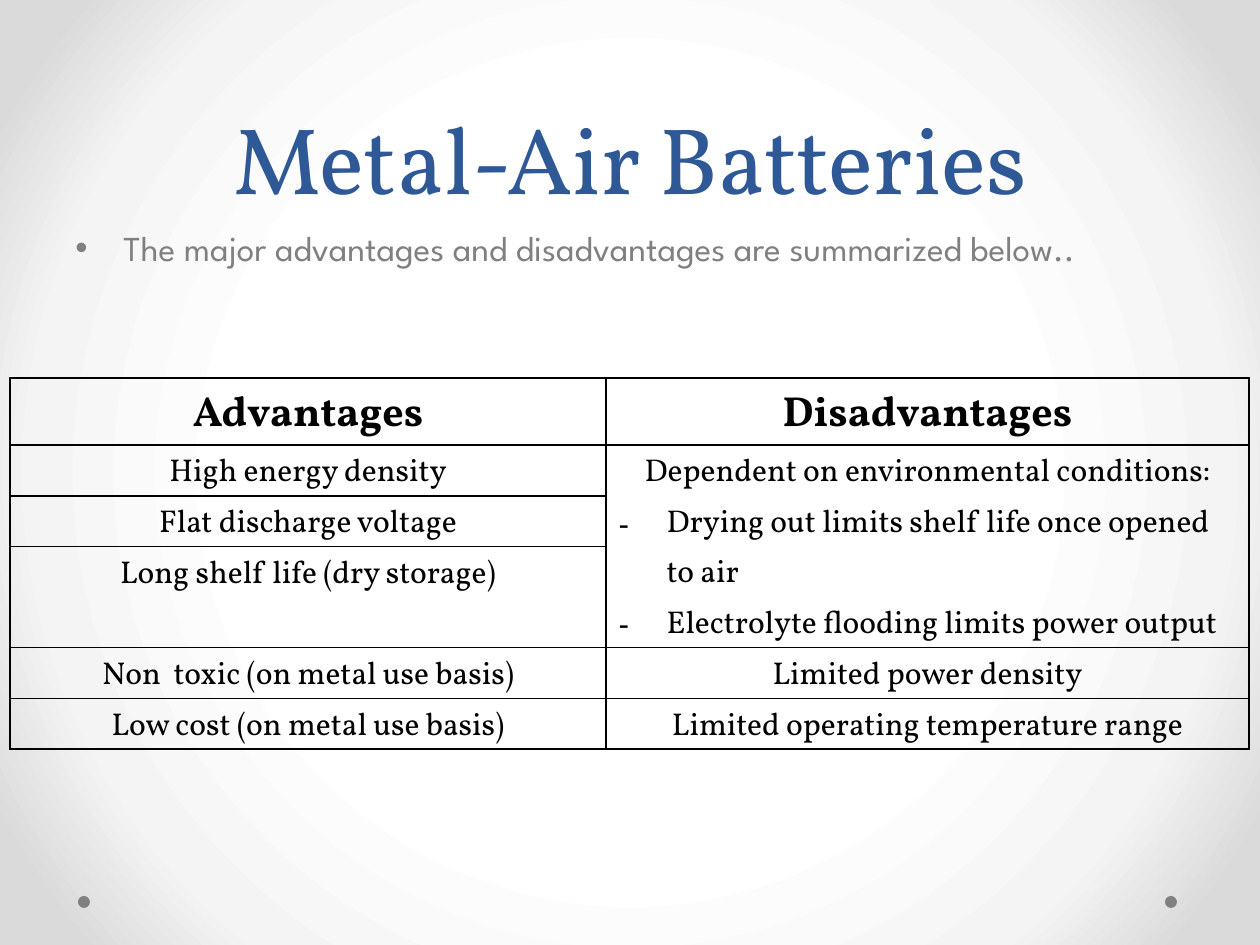
from pptx import Presentation
from pptx.dml.color import RGBColor
from pptx.enum.shapes import MSO_SHAPE
from pptx.enum.text import MSO_ANCHOR, PP_ALIGN
from pptx.oxml import parse_xml
from pptx.oxml.ns import qn
from pptx.util import Pt
from lxml.etree import SubElement

TITLE = "Metal-Air Batteries"
LEAD = "The major advantages and disadvantages are summarized below.."
HEADS = ["Advantages", "Disadvantages"]
PROS = [
    "High energy density",
    "Flat discharge voltage",
    "Long shelf life (dry storage)",
    "Non  toxic (on metal use basis)",
    "Low cost (on metal use basis)",
]
# Each entry: first row, last row, centred line, dashed points
CONS = [
    (1, 3, "Dependent on environmental conditions:", [
        "Drying out limits shelf life once opened to air",
        "Electrolyte flooding limits power output"]),
    (4, 4, "Limited power density", []),
    (5, 5, "Limited operating temperature range", []),
]

THEME = {
    "title": {"name": "Vollkorn", "size": 54, "color": "2F5897", "bold": False},
    "lead": {"name": "League Spartan", "size": 20, "color": "808080", "bold": False},
    "head": {"name": "Vollkorn", "size": 24, "color": "000000", "bold": True},
    "cell": {"name": "Vollkorn", "size": 18, "color": "000000", "bold": False},
    "dot": "808080",
    "rule": "000000",
    "glow": [(0, "FFFFFF"), (50, "FFFFFF"), (76, "F4F4F4"), (92, "DADADA"), (100, "DADADA")],
}

WIDE, HIGH = 1260, 945
TITLE_BOX = (63, 0, 1134, 220)
LEAD_BOX = (63, 220, 1134, 116)
GRID_AT = (10, 378)
COLS = [596, 643]
ROWS = [67, 51, 50, 101, 51, 50]
DOTS, DOT_TOP, DOT_SIZE = (78, 1165), 896, 12
HANG = 48
DRAWING = "http://schemas.openxmlformats.org/drawingml/2006/main"


def px(n):
    return round(n * 914400 / 126)


def box(*sides):
    return [px(n) for n in sides]


def write(para, text, style, **layout):
    run = para.add_run()
    run.text = text
    look = THEME[style]
    for key, value in {"name": look["name"], "size": Pt(look["size"]), "bold": look["bold"]}.items():
        setattr(run.font, key, value)
    run.font.color.rgb = RGBColor.from_string(look["color"])
    for key, value in layout.items():
        setattr(para, key, value)


def bullet(para, mark):
    props = para._p.get_or_add_pPr()
    props.set("marL", str(px(HANG)))
    props.set("indent", str(-px(HANG)))
    SubElement(props, qn("a:buFont"), typeface="Arial")
    SubElement(props, qn("a:buChar"), char=mark)


def paint(slide):
    """Fill the background with a round glow from the centre."""
    slide.background.fill.solid()
    stops = "".join(f'<a:gs pos="{at * 1000}"><a:srgbClr val="{color}"/></a:gs>'
                    for at, color in THEME["glow"])
    glow = parse_xml(
        f'<a:gradFill xmlns:a="{DRAWING}" rotWithShape="1"><a:gsLst>{stops}</a:gsLst>'
        '<a:path path="circle"><a:fillToRect l="50000" t="50000" r="50000" b="50000"/>'
        '</a:path></a:gradFill>')
    flat = next(slide.element.iter(qn("a:solidFill")))
    flat.getparent().replace(flat, glow)


def rule(cell):
    """Clear the cell's fill and draw its four borders."""
    cell.fill.background()
    props = cell._tc.get_or_add_tcPr()
    for i, side in enumerate(("lnL", "lnR", "lnT", "lnB")):
        props.insert(i, parse_xml(
            f'<a:{side} xmlns:a="{DRAWING}" w="{Pt(1)}"><a:solidFill>'
            f'<a:srgbClr val="{THEME["rule"]}"/></a:solidFill></a:{side}>'))


def fill(cell, text, style="cell", points=()):
    frame = cell.text_frame
    write(frame.paragraphs[0], text, style, alignment=PP_ALIGN.CENTER, line_spacing=1.15)
    for point in points:
        para = frame.add_paragraph()
        write(para, point, style, alignment=PP_ALIGN.LEFT, line_spacing=1.15)
        bullet(para, "-")


def add_grid(slide):
    grid = slide.shapes.add_table(
        len(ROWS), len(COLS), *box(*GRID_AT, sum(COLS), sum(ROWS))).table
    grid.first_row = grid.horz_banding = False
    for col, width in zip(grid.columns, COLS):
        col.width = px(width)
    for row, height in zip(grid.rows, ROWS):
        row.height = px(height)
    for cell in grid.iter_cells():
        cell.margin_top = cell.margin_bottom = 0
        rule(cell)
    for i, head in enumerate(HEADS):
        fill(grid.cell(0, i), head, "head")
    for i, pro in enumerate(PROS, 1):
        fill(grid.cell(i, 0), pro)
    for first, last, text, points in CONS:
        cell = grid.cell(first, 1)
        if last > first:
            cell.merge(grid.cell(last, 1))
        fill(cell, text, points=points)


def main():
    deck = Presentation()
    deck.slide_width, deck.slide_height = box(WIDE, HIGH)
    slide = deck.slides.add_slide(deck.slide_layouts[5])
    paint(slide)

    for left in DOTS:
        dot = slide.shapes.add_shape(MSO_SHAPE.OVAL, *box(left, DOT_TOP, DOT_SIZE, DOT_SIZE))
        dot.shadow.inherit = False
        dot.fill.solid()
        dot.fill.fore_color.rgb = RGBColor.from_string(THEME["dot"])
        dot.line.fill.background()

    title = slide.shapes.title
    title.left, title.top, title.width, title.height = box(*TITLE_BOX)
    title.text_frame.vertical_anchor = MSO_ANCHOR.BOTTOM
    write(title.text_frame.paragraphs[0], TITLE, "title",
          alignment=PP_ALIGN.CENTER, line_spacing=Pt(58))

    add_grid(slide)

    lead = slide.shapes.add_textbox(*box(*LEAD_BOX)).text_frame
    lead.word_wrap = True
    write(lead.paragraphs[0], LEAD, "lead", space_before=Pt(4))
    bullet(lead.paragraphs[0], "•")

    deck.save("out.pptx")


if __name__ == "__main__":
    main()
